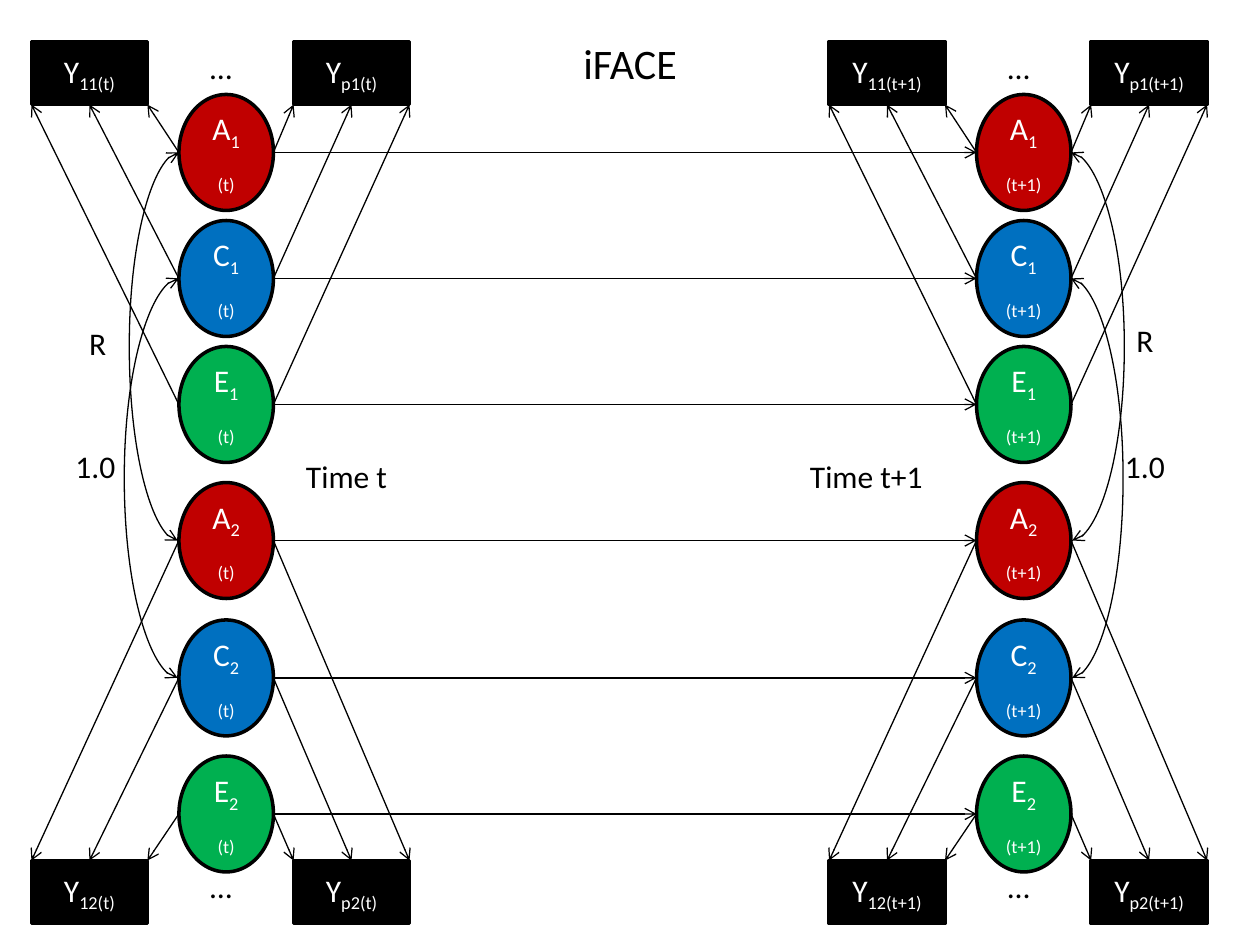
from dataclasses import dataclass

from lxml.etree import SubElement
from pptx import Presentation
from pptx.dml.color import RGBColor
from pptx.enum.shapes import MSO_CONNECTOR as Connector, MSO_SHAPE as Shape
from pptx.enum.text import MSO_ANCHOR as Anchor, MSO_AUTO_SIZE as AutoSize, PP_ALIGN as Align
from pptx.oxml.ns import qn
from pptx.util import Inches, Pt


@dataclass(frozen=True)
class Theme:
    font: str = "Calibri"
    black: RGBColor = RGBColor(0, 0, 0)
    white: RGBColor = RGBColor(255, 255, 255)
    red: RGBColor = RGBColor(0xC0, 0, 0)
    blue: RGBColor = RGBColor(0, 0x70, 0xC0)
    green: RGBColor = RGBColor(0, 0xB0, 0x50)
    title_size: Pt = Pt(24)
    text_size: Pt = Pt(18)
    outline: Pt = Pt(2)
    arrow: Pt = Pt(0.75)


theme = Theme()
presentation = Presentation()
presentation.slide_width, presentation.slide_height = Inches(10), Inches(7.5)
slide = presentation.slides.add_slide(presentation.slide_layouts[5])
shapes = slide.shapes


def write(shape, paragraphs, color, align=Align.CENTER, size=theme.text_size):
    """Fill a shape with paragraphs of text; a leading "_" marks a subscript run."""
    frame = shape.text_frame
    for index, runs in enumerate(paragraphs):
        paragraph = frame.add_paragraph() if index else frame.paragraphs[0]
        paragraph.alignment = align
        for text in runs:
            run = paragraph.add_run()
            run.text = text.removeprefix("_")
            for name, value in {"name": theme.font, "size": size}.items():
                setattr(run.font, name, value)
            run.font.color.rgb = color
            if text.startswith("_"):
                run.font._element.set("baseline", "-25000")


def add_arrow(start, end, kind=Connector.STRAIGHT, ends=("tailEnd",)):
    arrow = shapes.add_connector(kind, *map(Inches, (*start, *end)))
    arrow.line.color.rgb = theme.black
    arrow.line.width = theme.arrow
    for tag in ends:
        SubElement(arrow.line._get_or_add_ln(), qn(f"a:{tag}"), type="arrow")
    SubElement(arrow._element.spPr, qn("a:effectLst"))
    return arrow


title = shapes.title
title.left, title.top, title.width, title.height = map(Inches, (0, 0.25, 10, 0.5))
write(title, [["iFACE"]], theme.black, size=theme.title_size)
for name, value in {"auto_size": AutoSize.NONE, "vertical_anchor": Anchor.TOP}.items():
    setattr(title.text_frame, name, value)

# Latent factors and observed variables, once per time point
times = {"(t)": 0, "(t+1)": 6.33}
factor_tops = [0.75, 1.75, 2.75, 3.83, 4.92, 6]
factors = [("A", theme.red), ("C", theme.blue), ("E", theme.green)]
factor_left, factor_width, factor_height = 1.42, 0.75, 0.92
factor_right = factor_left + factor_width
centers = [top + factor_height / 2 for top in factor_tops]
box_lefts = {"1": 0.25, "p": 2.33}
box_tops = {"1": 0.33, "2": 6.83}
box_width, box_height = 0.92, 0.5

nodes = []
for time, shift in times.items():
    for index, top in enumerate(factor_tops):
        twin, (letter, color) = index // 3 + 1, factors[index % 3]
        nodes.append((Shape.OVAL, shift + factor_left, top, factor_width, factor_height,
                      color, [[letter, f"_{twin}"], [f"_{time}"]]))
    for variable, left in box_lefts.items():
        for twin, top in box_tops.items():
            nodes.append((Shape.RECTANGLE, shift + left, top, box_width, box_height,
                          theme.black, [["Y", f"_{variable}{twin}{time}"]]))

for kind, left, top, width, height, color, paragraphs in nodes:
    node = shapes.add_shape(kind, *map(Inches, (left, top, width, height)))
    node.shadow.inherit = False
    node.fill.solid()
    node.fill.fore_color.rgb = color
    node.line.color.rgb = theme.black
    node.line.width = theme.outline
    node.text_frame.vertical_anchor = Anchor.MIDDLE
    write(node, paragraphs, theme.white)

# Paths from one time point to the next
for center in centers:
    add_arrow((factor_right, center), (factor_left + times["(t+1)"], center))

# Loadings: the factor nearest the boxes points to their inner corners
for shift in times.values():
    for index, center in enumerate(centers):
        upper = index < 3
        reach = (index if upper else 5 - index) * box_width / 2
        edge = box_tops["1"] + box_height if upper else box_tops["2"]
        inner_left = box_lefts["1"] + box_width
        add_arrow((shift + factor_left, center), (shift + inner_left - reach, edge))
        add_arrow((shift + factor_right, center), (shift + box_lefts["p"] + reach, edge))

# Twin correlations; the bulge is given relative to a very narrow connector
narrow = 0.01
right_side = factor_right + times["(t+1)"]
for side, direction, first, bulge in [
    (factor_left, -1, 0, 0.4), (factor_left, -1, 1, 0.44),
    (right_side, 1, 0, 0.43), (right_side, 1, 1, 0.42),
]:
    curve = add_arrow((side, centers[first]), (side + direction * narrow, centers[first + 3]),
                      Connector.CURVE, ("headEnd", "tailEnd"))
    guides = curve._element.spPr.find(qn("a:prstGeom")).get_or_add_avLst()
    SubElement(guides, qn("a:gd"), name="adj1", fmla=f"val {round(bulge / narrow * 100000)}")

labels = [
    ("R", 0.61, 2.52, 0.34, Align.LEFT, False),
    ("1.0", 0.5, 3.5, 0.52, Align.LEFT, False),
    ("R", 8.92, 2.5, 0.34, Align.LEFT, False),
    ("1.0", 8.83, 3.5, 0.52, Align.LEFT, False),
    ("Time t", 2.33, 3.58, 0.92, Align.LEFT, True),
    ("Time t+1", 6.33, 3.58, 1.17, Align.LEFT, True),
]
for shift in times.values():
    for top in box_tops.values():
        labels.append(("…", shift + 1.17, top, 1.17, Align.CENTER, True))

for text, left, top, width, align, wrap in labels:
    label = shapes.add_textbox(*map(Inches, (left, top, width, 0.4)))
    label.text_frame.word_wrap = wrap
    label.text_frame.auto_size = AutoSize.SHAPE_TO_FIT_TEXT
    write(label, [[text]], theme.black, align)

presentation.save("out.pptx")
